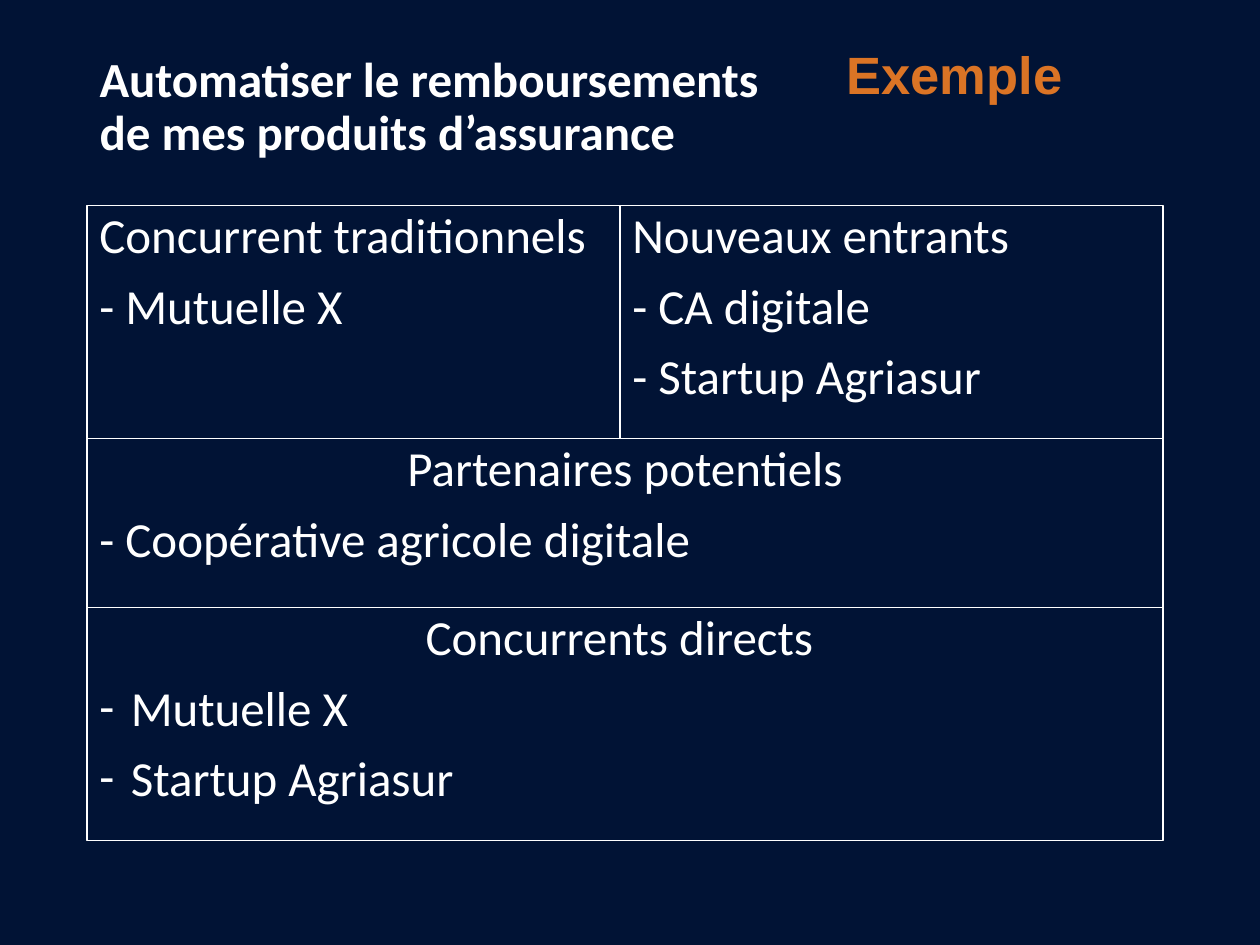
from lxml.etree import SubElement
from pptx import Presentation
from pptx.dml.color import RGBColor
from pptx.enum.shapes import MSO_SHAPE
from pptx.enum.text import MSO_ANCHOR, MSO_AUTO_SIZE, PP_ALIGN
from pptx.oxml.ns import qn
from pptx.util import Inches, Pt

HUES = {"night": "011335", "white": "FFFFFF", "orange": "DB7425"}
BODY = {"name": "Calibri", "size": Pt(28), "bold": False}
TITLE = {**BODY, "bold": True}
LABEL = {"name": "Arial", "size": Pt(30), "bold": True}
COLS = (0.69, 4.92, 9.23)
ROWS = (1.63, 3.48, 4.82, 6.67)


def hue(name):
    """Return the named colour."""
    return RGBColor.from_string(HUES[name])


def place(shape, left, top, width, height):
    """Move and size a shape in inches."""
    spot = {"left": left, "top": top, "width": width, "height": height}
    for key, value in spot.items():
        setattr(shape, key, Inches(value))


def dash(para):
    """Give a paragraph a hanging dash bullet."""
    props = para._p.get_or_add_pPr()
    props.set("marL", str(Inches(0.25)))
    props.set("indent", str(-Inches(0.25)))
    tint = SubElement(props, qn("a:buClr"))
    SubElement(tint, qn("a:srgbClr")).set("val", HUES["white"])
    SubElement(props, qn("a:buFont")).set("typeface", "Calibri")
    SubElement(props, qn("a:buChar")).set("char", "-")


def write(shape, lines, style, tone="white", inset=0.05, line=0.9, gap=0,
          head=PP_ALIGN.LEFT, bullets=False):
    """Fill a shape with styled paragraphs, the first one being the heading."""
    frame = shape.text_frame
    form = {"word_wrap": True, "auto_size": MSO_AUTO_SIZE.NONE,
            "vertical_anchor": MSO_ANCHOR.TOP,
            "margin_left": Inches(0.1), "margin_right": Inches(0.1),
            "margin_top": Inches(inset), "margin_bottom": Inches(inset)}
    for key, value in form.items():
        setattr(frame, key, value)
    for rank, text in enumerate(lines):
        para = frame.paragraphs[0] if rank == 0 else frame.add_paragraph()
        para.alignment = PP_ALIGN.LEFT if rank else head
        para.line_spacing = line
        para.space_before = Pt(gap if rank else 0)
        if bullets and rank:
            dash(para)
        run = para.add_run()
        run.text = text
        for key, value in style.items():
            setattr(run.font, key, value)
        run.font.color.rgb = hue(tone)


def cell(slide, col, row, span, lines, **form):
    """Draw one outlined cell of the grid."""
    left, top = COLS[col], ROWS[row]
    box = slide.shapes.add_shape(MSO_SHAPE.RECTANGLE, 0, 0, 0, 0)
    place(box, left, top, COLS[col + span] - left, ROWS[row + 1] - top)
    box.shadow.inherit = False
    box.fill.background()
    box.line.color.rgb = hue("white")
    box.line.width = Pt(0.75)
    write(box, lines, BODY, gap=10, **form)


def main():
    """Build the slide and save it."""
    deck = Presentation()
    deck.slide_width, deck.slide_height = Inches(10), Inches(7.5)
    slide = deck.slides.add_slide(deck.slide_layouts[5])
    slide.background.fill.solid()
    slide.background.fill.fore_color.rgb = hue("night")

    title = slide.shapes.title
    place(title, COLS[0], 0.39, COLS[-1] - COLS[0], 1.1)
    write(title, ["Automatiser le remboursements",
                  "de mes produits d’assurance"], TITLE)

    cell(slide, 0, 1, 2, ["Partenaires potentiels",
                          "- Coopérative agricole digitale"],
         head=PP_ALIGN.CENTER)
    cell(slide, 0, 0, 1, ["Concurrent traditionnels", "- Mutuelle X"])
    cell(slide, 1, 0, 1, ["Nouveaux entrants", "- CA digitale",
                          "- Startup Agriasur"])
    cell(slide, 0, 2, 2, ["Concurrents directs ", "Mutuelle X",
                          "Startup Agriasur"],
         head=PP_ALIGN.CENTER, bullets=True)

    label = slide.shapes.add_textbox(0, 0, 0, 0)
    place(label, 6.62, 0.23, 1.96, 0.71)
    write(label, ["Exemple"], LABEL, "orange", inset=0.1, line=1)
    deck.save("out.pptx")


if __name__ == "__main__":
    main()
